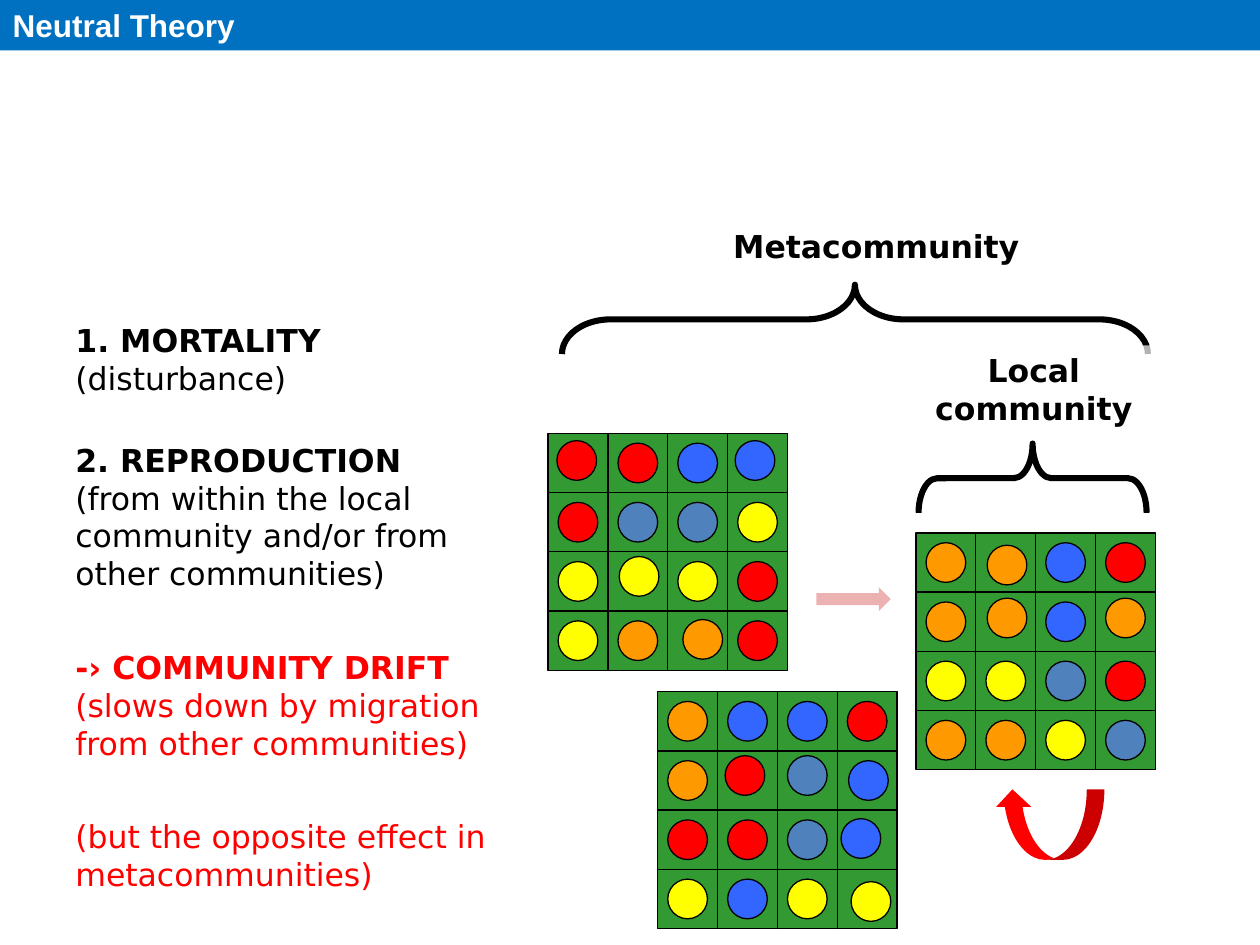
from lxml import etree
from pptx import Presentation
from pptx.dml.color import RGBColor
from pptx.enum.shapes import MSO_SHAPE
from pptx.enum.text import MSO_ANCHOR, MSO_AUTO_SIZE, PP_ALIGN
from pptx.oxml.ns import qn
from pptx.util import Inches, Pt

RECT, OVAL, BRACE = MSO_SHAPE.RECTANGLE, MSO_SHAPE.OVAL, MSO_SHAPE.LEFT_BRACE
RIGHT_ARROW, CURVED_ARROW = MSO_SHAPE.RIGHT_ARROW, MSO_SHAPE.CURVED_LEFT_ARROW
LEFT, CENTER, RIGHT = PP_ALIGN.LEFT, PP_ALIGN.CENTER, PP_ALIGN.RIGHT
TOP, MIDDLE, NO_FIT = MSO_ANCHOR.TOP, MSO_ANCHOR.MIDDLE, MSO_AUTO_SIZE.NONE

THEME = {
    "title font": "Arial", "body font": "DejaVu Sans", "size": Pt(18),
    "paragraph gap": Pt(32), "thin": Pt(0.75), "thick": Pt(3.5),
    "white": "FFFFFF", "black": "000000", "bar": "0070C0", "field": "339933",
    "drift": "FF0000", "migration": "ECB2B2",
    # species
    "R": "FF0000", "O": "FF9900", "Y": "FFFF00", "B": "3366FF", "S": "4F81BD",
}

prs = Presentation()
prs.slide_width, prs.slide_height = Inches(10), Inches(7.5)
s = prs.slides.add_slide(prs.slide_layouts[5])

# Every length below is in columns and rows of a 100 x 75 grid
COL, ROW = prs.slide_width / 100, prs.slide_height / 75


def add(kind, left, top, width, height, fill=None, line=None, weight=None):
    sp = s.shapes.add_shape(kind, int(left * COL), int(top * ROW),
                            int(width * COL), int(height * ROW))
    sp.shadow.inherit = False
    if fill:
        sp.fill.solid()
        sp.fill.fore_color.rgb = RGBColor.from_string(THEME[fill])
    else:
        sp.fill.background()
    if line:
        sp.line.color.rgb = RGBColor.from_string(THEME[line])
        sp.line.width = weight
    else:
        sp.line.fill.background()
    return sp


def style(r, font, color, bold):
    r.font.name, r.font.size, r.font.bold = THEME[font], THEME["size"], bold
    r.font.color.rgb = RGBColor.from_string(THEME[color])


# Title bar
title = s.shapes.title
title.left, title.top = 0, 0
title.width, title.height = prs.slide_width, int(4 * ROW)
title.fill.solid()
title.fill.fore_color.rgb = RGBColor.from_string(THEME["bar"])
tf = title.text_frame
tf.text = "Neutral Theory"
tf.auto_size, tf.vertical_anchor = NO_FIT, MIDDLE
tf.paragraphs[0].alignment = LEFT
style(tf.paragraphs[0].runs[0], "title font", "white", True)

# Braces over the local community and the metacommunity
for left, top, width, height, curl in [(79.2, 28.9, 5.5, 18.1, 0.27),
                                       (65.1, 2.1, 5.5, 46.5, 0.7)]:
    sp = add(BRACE, left, top, width, height, line="black", weight=THEME["thick"])
    sp.rotation = 90
    sp.adjustments[0] = curl

# Text: box, alignment, then (bold heading, plain remainder, colour) per paragraph
texts = [
    ((70.8, 27.4, 22.5, 7.1), CENTER, [("Local community", "", "black")]),
    ((53.3, 17.5, 28.6, 4), RIGHT, [("Metacommunity", "", "black")]),
    ((5, 25, 22.8, 7), LEFT, [("1. MORTALITY ", "(disturbance)", "black")]),
    ((5, 34.5, 35, 38), LEFT, [
        ("2. REPRODUCTION ",
         "(from within the local community and/or from other communities)", "black"),
        ("-› COMMUNITY DRIFT ",
         "(slows down by migration from other communities)", "drift"),
        ("", "(but the opposite effect in metacommunities)", "drift"),
    ]),
]
for box, alignment, paragraphs in texts:
    sp = add(RECT, *box, fill="white")
    color = sp.fill._xPr.find(qn("a:solidFill"))[0]
    etree.SubElement(color, qn("a:alpha"), val="70000")
    tf = sp.text_frame
    tf.word_wrap, tf.vertical_anchor = True, TOP
    for i, (heading, remainder, color) in enumerate(paragraphs):
        p = tf.add_paragraph() if i else tf.paragraphs[0]
        p.alignment = alignment
        if i:
            p.space_before = THEME["paragraph gap"]
        for text, bold in [(heading, True), (remainder, False)]:
            if text:
                r = p.add_run()
                r.text = text
                style(r, "body font", color, bold)

# Communities: corner, species by row, and shifts of individuals off cell centre
CELL_W, CELL_H, DOT = 4.75, 4.7, 3.15
communities = [
    (43.5, 34.4, ["RRBB", "RSSY", "YYYR", "YOOR"],
     {(0, 0): (-0.1, -0.2), (0, 3): (-0.2, -0.2),
      (2, 1): (0.1, -0.4), (3, 2): (0.4, -0.1)}),
    (52.2, 54.9, ["OBBR", "ORSB", "RRSB", "YBYY"],
     {(1, 1): (-0.2, -0.4), (1, 2): (0, -0.4), (1, 3): (0.1, 0),
      (2, 3): (-0.5, -0.1), (3, 3): (0.3, 0.2)}),
    (72.7, 42.3, ["OOBR", "OOBO", "YYSR", "OOYS"],
     {(0, 1): (0.1, 0.2), (1, 1): (0.1, -0.3), (1, 3): (0, -0.3)}),
]
for left, top, rows, shifts in communities:
    for i, row in enumerate(rows):
        for j, species in enumerate(row):
            x, y = left + j * CELL_W, top + i * CELL_H
            dx, dy = shifts.get((i, j), (0, 0))
            add(RECT, x, y, CELL_W, CELL_H, "field", "black", THEME["thin"])
            add(OVAL, x + (CELL_W - DOT) / 2 + dx, y + (CELL_H - DOT) / 2 + dy,
                DOT, DOT, species, "black", THEME["thin"])

# Migration into the local community, and reproduction within it
add(RIGHT_ARROW, 64.8, 46.6, 5.9, 1.9, fill="migration")
add(CURVED_ARROW, 80.5, 61.1, 5.6, 8.7, fill="drift").rotation = 90

prs.save("out.pptx")
